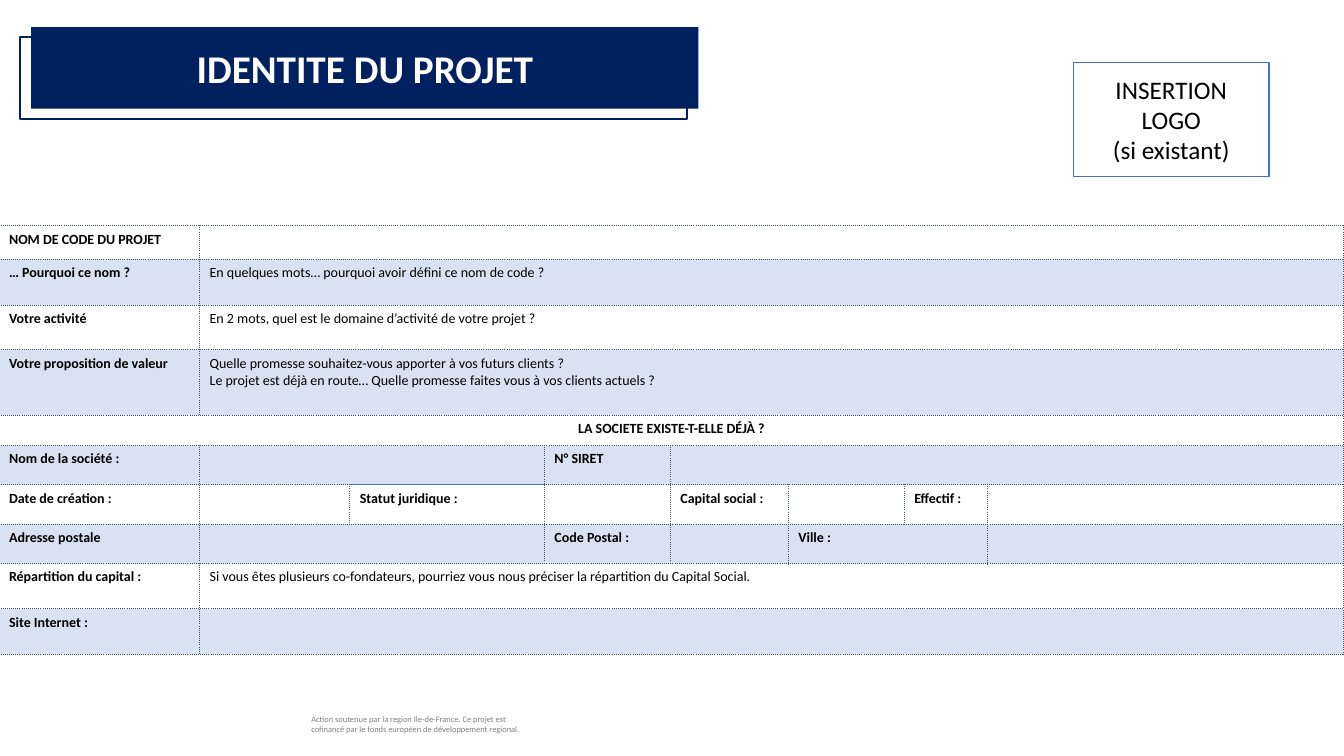
from dataclasses import dataclass

from lxml import etree
from pptx import Presentation
from pptx.dml.color import RGBColor
from pptx.enum import shapes, text
from pptx.oxml.ns import qn
from pptx.util import Pt


@dataclass(frozen=True)
class Theme:
    font: str = "Calibri"
    navy: str = "002060"
    blue: str = "4472C4"
    slate: str = "44546A"
    grey: str = "808080"
    black: str = "000000"
    white: str = "FFFFFF"
    tint_alpha: int = 20000
    title_size: int = 28
    logo_size: int = 18
    table_size: int = 10
    credit_size: int = 6


THEME = Theme()

COLUMN_WIDTHS = [143.3, 107.3, 139, 90, 84.2, 82.8, 59.8, 254.2]

# Each row: height, then (wording, columns covered) for each field.
FORM_ROWS = [
    (23.8, [("NOM DE CODE DU PROJET", 1), ("", 7)]),
    (33.1, [("… Pourquoi ce nom ?", 1),
            ("En quelques mots… pourquoi avoir défini ce nom de code ?", 7)]),
    (31.7, [("Votre activité", 1),
            ("En 2 mots, quel est le domaine d’activité de votre projet ?", 7)]),
    (46.8, [("Votre proposition de valeur", 1),
            ("Quelle promesse souhaitez-vous apporter à vos futurs clients ?\n"
             "Le projet est déjà en route… Quelle promesse faites vous à vos clients actuels ?", 7)]),
    (21.6, [("LA SOCIETE EXISTE-T-ELLE DÉJÀ ?", 8)]),
    (28.1, [("Nom de la société :", 1), ("", 2), ("N° SIRET", 1), ("", 4)]),
    (28.1, [("Date de création :", 1), ("", 1), ("Statut juridique :", 1), ("", 1),
            ("Capital social :", 1), ("", 1), ("Effectif :", 1), ("", 1)]),
    (28.1, [("Adresse postale", 1), ("", 2), ("Code Postal :", 1), ("", 1),
            ("Ville :", 2), ("", 1)]),
    (32.4, [("Répartition du capital :", 1),
            ("Si vous êtes plusieurs co-fondateurs, pourriez vous nous préciser "
             "la répartition du Capital Social.", 7)]),
    (32.4, [("Site Internet :", 1), ("", 7)]),
]
HINT_SPAN = 7
HEADING_SPAN = 8
LEGAL_STATUS = (6, 2)


def style_text(frame, size, color, bold=False, align=text.PP_ALIGN.LEFT):
    for paragraph in frame.paragraphs:
        paragraph.alignment = align
        font = paragraph.font
        font.name, font.size, font.bold = THEME.font, Pt(size), bold
        font.color.rgb = RGBColor.from_string(color)


def add_box(slide, left, top, width, height, fill=None, line=None, weight=1):
    box = slide.shapes.add_shape(shapes.MSO_SHAPE.RECTANGLE,
                                 Pt(left), Pt(top), Pt(width), Pt(height))
    box.shadow.inherit = False
    if fill:
        box.fill.solid()
        box.fill.fore_color.rgb = RGBColor.from_string(fill)
    else:
        box.fill.background()
    if line:
        box.line.color.rgb = RGBColor.from_string(line)
        box.line.width = Pt(weight)
    else:
        box.line.fill.background()
    return box


def add_title(slide):
    add_box(slide, 14.4, 26.6, 476.6, 58.3, line=THEME.navy, weight=1.5)
    add_box(slide, 22.3, 19.4, 476.6, 58.3, fill=THEME.navy)
    title = slide.shapes.title
    title.left, title.top, title.width, title.height = Pt(22.3), Pt(28.1), Pt(476.6), Pt(41)
    title.text_frame.text = "IDENTITE DU PROJET"
    title.text_frame.auto_size = text.MSO_AUTO_SIZE.NONE
    style_text(title.text_frame, THEME.title_size, THEME.white, True, text.PP_ALIGN.CENTER)
    # The title reads above its banner.
    title.element.getparent().append(title.element)


def add_logo_slot(slide):
    slot = add_box(slide, 766.8, 44.6, 139.7, 81.4, THEME.white, THEME.blue)
    slot.text_frame.text = "INSERTION LOGO\n(si existant)"
    slot.text_frame.word_wrap = True
    slot.text_frame.vertical_anchor = text.MSO_ANCHOR.MIDDLE
    style_text(slot.text_frame, THEME.logo_size, THEME.black, align=text.PP_ALIGN.CENTER)


def add_credit(slide):
    credit = slide.shapes.add_textbox(Pt(215.3), Pt(506.2), Pt(171.4), Pt(21.6))
    credit.text_frame.word_wrap = True
    credit.text_frame.text = ("Action soutenue par la region Ile-de-France. Ce projet est "
                              "cofinancé par le fonds européen de développement regional.")
    style_text(credit.text_frame, THEME.credit_size, THEME.grey)


def set_borders(cell, solid_side=None):
    """Dot every side of the cell, except one that may be solid blue."""
    properties = cell._tc.get_or_add_tcPr()
    for side in ("lnL", "lnR", "lnT", "lnB"):
        solid = side == solid_side
        line = etree.SubElement(properties, qn(f"a:{side}"), w=str(Pt(1)))
        fill = etree.SubElement(line, qn("a:solidFill"))
        etree.SubElement(fill, qn("a:srgbClr"), val=THEME.blue if solid else THEME.slate)
        etree.SubElement(line, qn("a:prstDash"), val="solid" if solid else "sysDot")


def set_tint(cell):
    cell.fill.solid()
    cell.fill.fore_color.rgb = RGBColor.from_string(THEME.blue)
    color = cell._tc.tcPr.find(f"{qn('a:solidFill')}/{qn('a:srgbClr')}")
    etree.SubElement(color, qn("a:alpha"), val=str(THEME.tint_alpha))


def format_cell(cell, row, column):
    solid_sides = {LEGAL_STATUS: "lnT", (LEGAL_STATUS[0] - 1, LEGAL_STATUS[1]): "lnB"}
    set_borders(cell, solid_sides.get((row, column)))
    if row % 2:
        set_tint(cell)
    else:
        cell.fill.background()
    if not cell.text:
        # Keeps blank fields from stretching their row.
        etree.SubElement(cell.text_frame.paragraphs[0]._p, qn("a:endParaRPr"),
                         sz=str(THEME.table_size * 100))


def add_form(slide):
    heights = [height for height, _ in FORM_ROWS]
    form = slide.shapes.add_table(len(heights), len(COLUMN_WIDTHS), Pt(-0.7), Pt(161.3),
                                  Pt(sum(COLUMN_WIDTHS)), Pt(sum(heights))).table
    form.first_row = form.horz_banding = False
    for column, width in zip(form.columns, COLUMN_WIDTHS):
        column.width = Pt(width)
    for row, (height, fields) in enumerate(FORM_ROWS):
        form.rows[row].height = Pt(height)
        start = 0
        for wording, span in fields:
            field = form.cell(row, start)
            if span > 1:
                field.merge(form.cell(row, start + span - 1))
            if wording:
                field.text = wording
                align = text.PP_ALIGN.CENTER if span == HEADING_SPAN else text.PP_ALIGN.LEFT
                style_text(field.text_frame, THEME.table_size, THEME.black,
                           span != HINT_SPAN, align)
            start += span
        for column in range(len(COLUMN_WIDTHS)):
            format_cell(form.cell(row, column), row, column)


def main():
    deck = Presentation()
    deck.slide_width, deck.slide_height = Pt(960), Pt(540)
    slide = deck.slides.add_slide(deck.slide_layouts.get_by_name("Title Only"))
    add_credit(slide)
    add_form(slide)
    add_logo_slot(slide)
    add_title(slide)
    deck.save("out.pptx")


if __name__ == "__main__":
    main()
